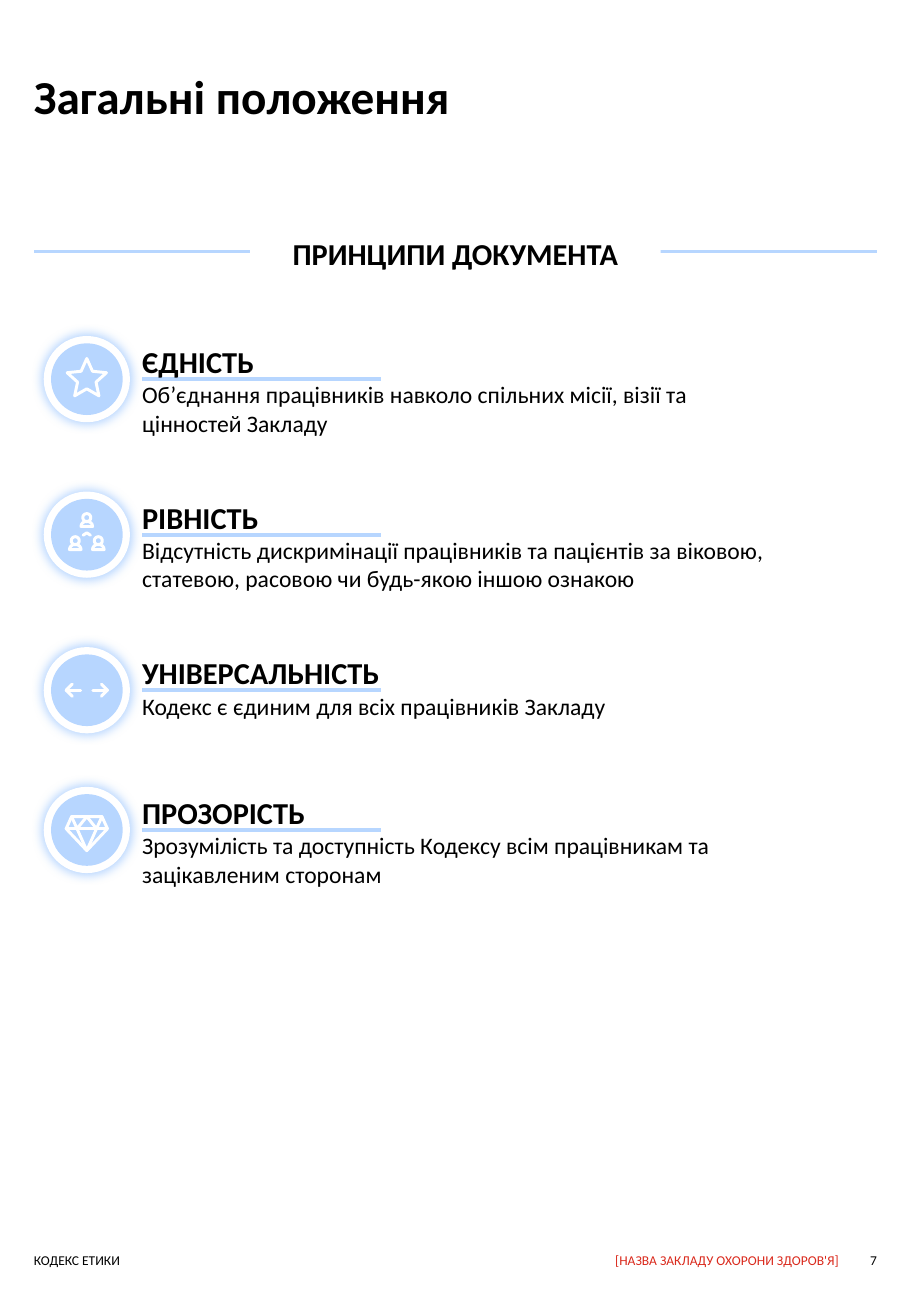
"""Build the code of ethics page that lists the four principles of the document."""
from dataclasses import dataclass
from math import cos, pi, sin

from lxml import etree
from pptx import Presentation
from pptx.dml.color import RGBColor
from pptx.enum.shapes import MSO_CONNECTOR, MSO_SHAPE
from pptx.enum.text import MSO_ANCHOR, PP_ALIGN
from pptx.oxml.ns import qn
from pptx.util import Inches, Pt

LEFT, CENTER, RIGHT = PP_ALIGN.LEFT, PP_ALIGN.CENTER, PP_ALIGN.RIGHT
TOP, MIDDLE = MSO_ANCHOR.TOP, MSO_ANCHOR.MIDDLE
OVAL, RECT = MSO_SHAPE.OVAL, MSO_SHAPE.RECTANGLE
STRAIGHT = MSO_CONNECTOR.STRAIGHT

COLORS = {"ink": "000000", "sky": "B7D6FF", "paper": "FFFFFF", "note": "DA291C"}
FONT = "Calibri"
WIDTH, HEIGHT = Inches(7.5), Inches(10.83)
COLS, ROWS = 750, 1083
EDGE, INNER, AXIS = 28, 117, 71.5
RING, DISC = 35.5, 29.5

Point = tuple[float, float]
Path = list[Point]


@dataclass
class Label:
    text: str
    left: float
    top: float
    width: float
    height: float
    size: int
    bold: bool = False
    color: str = "ink"
    align: PP_ALIGN = LEFT


@dataclass
class Rule:
    left: float
    right: float
    row: float


@dataclass
class Item:
    head: str
    body: str
    row: float
    icon: list[Path]


def col(num: float) -> int:
    return round(WIDTH * num / COLS)


def row(num: float) -> int:
    return round(HEIGHT * num / ROWS)


def rgb(name: str) -> RGBColor:
    return RGBColor.from_string(COLORS[name])


def star() -> list[Path]:
    spokes = [(17 if k % 2 == 0 else 8, k * pi / 5) for k in range(11)]
    return [[(r * sin(a), -r * cos(a)) for r, a in spokes]]


def person(x: float, y: float) -> list[Path]:
    turns = [k * pi / 8 for k in range(17)]
    head = [(x + 3.3 * cos(a), y + 3.3 * sin(a)) for a in turns]
    dome = [(x - 4.8 * cos(a), y + 7.3 - 4.3 * sin(a)) for a in turns[:9]]
    return [head, dome + dome[:1]]


def people() -> list[Path]:
    spots = [(0, -14), (-9.5, 5), (9.5, 5)]
    roof = [(-3, 0.5), (0, -1.5), (3, 0.5)]
    return [path for spot in spots for path in person(*spot)] + [roof]


def arrows() -> list[Path]:
    return [[(side * x, y) for x, y in path] for side in (-1, 1)
            for path in ([(5, 0), (17, 0)], [(12, -5), (17, 0), (12, 5)])]


def diamond() -> list[Path]:
    rim = [(-17, -1), (-12.5, -11), (12.5, -11), (17, -1), (0, 17), (-17, -1)]
    crown = [(-12.5, -11), (-8, -1), (0, -11), (8, -1), (12.5, -11)]
    return [rim, crown, [(-17, -1), (17, -1)], [(-8, -1), (0, 17), (8, -1)]]


def fill_text(shape, label: Label, anchor: MSO_ANCHOR, after: int = 0) -> None:
    frame = shape.text_frame
    frame.text = label.text
    frame.word_wrap = True
    frame.vertical_anchor = anchor
    frame.margin_left = frame.margin_right = 0
    frame.margin_top = frame.margin_bottom = 0
    para = frame.paragraphs[0]
    para.alignment = label.align
    para.space_after = Pt(after)
    font = para.runs[0].font
    font.name, font.size, font.bold = FONT, Pt(label.size), label.bold
    font.color.rgb = rgb(label.color)


def add_label(slide, label: Label) -> None:
    box = slide.shapes.add_textbox(col(label.left), row(label.top),
                                   col(label.width), row(label.height))
    fill_text(box, label, TOP)


def add_rule(slide, rule: Rule) -> None:
    line = slide.shapes.add_connector(STRAIGHT, col(rule.left), row(rule.row),
                                      col(rule.right), row(rule.row))
    line.line.color.rgb = rgb("sky")
    line.line.width = Pt(2.25)
    etree.SubElement(line._element.spPr, qn("a:effectLst"))


def add_banner(slide, label: Label) -> None:
    band = slide.shapes.add_shape(RECT, col(label.left), row(label.top),
                                  col(label.width), row(label.height))
    paint(band, "paper")
    fill_text(band, label, MIDDLE, after=6)


def paint(shape, name: str) -> None:
    shape.shadow.inherit = False
    shape.fill.solid()
    shape.fill.fore_color.rgb = rgb(name)
    shape.line.fill.background()


def add_disc(slide, mid: float, radius: float, name: str):
    disc = slide.shapes.add_shape(OVAL, col(AXIS - radius), row(mid - radius),
                                  col(2 * radius), row(2 * radius))
    paint(disc, name)
    return disc


def add_halo(shape) -> None:
    effects = shape._element.spPr.find(qn("a:effectLst"))
    halo = etree.SubElement(effects, qn("a:outerShdw"), blurRad=str(Pt(6)),
                            sx="105000", sy="105000", algn="ctr", rotWithShape="0")
    etree.SubElement(halo, qn("a:srgbClr"), val=COLORS["sky"])


def add_icon(slide, mid: float, paths: list[Path]) -> None:
    spots = [[(col(AXIS + x), row(mid + y)) for x, y in path] for path in paths]
    pen = slide.shapes.build_freeform(*spots[0][0])
    for path in spots:
        pen.move_to(*path[0])
        pen.add_line_segments(path[1:], close=path[0] == path[-1])
    icon = pen.convert_to_shape()
    icon.shadow.inherit = False
    icon.fill.background()
    icon.line.color.rgb = rgb("paper")
    icon.line.width = Pt(1.75)
    stroke = icon.line._get_or_add_ln()
    stroke.set("cap", "rnd")
    etree.SubElement(stroke, qn("a:round"))


def add_item(slide, item: Item) -> None:
    add_rule(slide, Rule(INNER, 314, item.row))
    add_label(slide, Label(item.head, INNER, item.row - 29.5, 307, 30, 18, True))
    add_label(slide, Label(item.body, INNER, item.row + 1, 534, 47, 14))
    add_halo(add_disc(slide, item.row, RING, "paper"))
    add_disc(slide, item.row, DISC, "sky")
    add_icon(slide, item.row, item.icon)


LABELS = [
    Label("[НАЗВА ЗАКЛАДУ ОХОРОНИ ЗДОРОВ'Я]", 390, 1030, 301, 13, 8, False, "note", RIGHT),
    Label("7", 703, 1030, 19, 13, 8, align=RIGHT),
    Label("КОДЕКС ЕТИКИ", EDGE, 1030, 350, 16, 8),
    Label("Загальні положення", EDGE, 55, 694, 53, 28, True),
]
BANNER = Label("ПРИНЦИПИ ДОКУМЕНТА", 206, 185, 338, 47, 18, True, align=CENTER)
ITEMS = [
    Item("ЄДНІСТЬ", "Об’єднання працівників навколо спільних місії, візії та "
         "цінностей Закладу", 312, star()),
    Item("РІВНІСТЬ", "Відсутність дискримінації працівників та пацієнтів за віковою, "
         "статевою, расовою чи будь-якою іншою ознакою", 440, people()),
    Item("УНІВЕРСАЛЬНІСТЬ", "Кодекс є єдиним для всіх працівників Закладу", 568, arrows()),
    Item("ПРОЗОРІСТЬ", "Зрозумілість та доступність Кодексу всім працівникам та "
         "зацікавленим сторонам", 683, diamond()),
]


def main() -> None:
    deck = Presentation()
    deck.slide_width, deck.slide_height = WIDTH, HEIGHT
    slide = deck.slides.add_slide(deck.slide_layouts[6])
    for label in LABELS:
        add_label(slide, label)
    add_rule(slide, Rule(EDGE, COLS - EDGE, 207))
    add_banner(slide, BANNER)
    for item in ITEMS:
        add_item(slide, item)
    deck.save("out.pptx")


if __name__ == "__main__":
    main()
